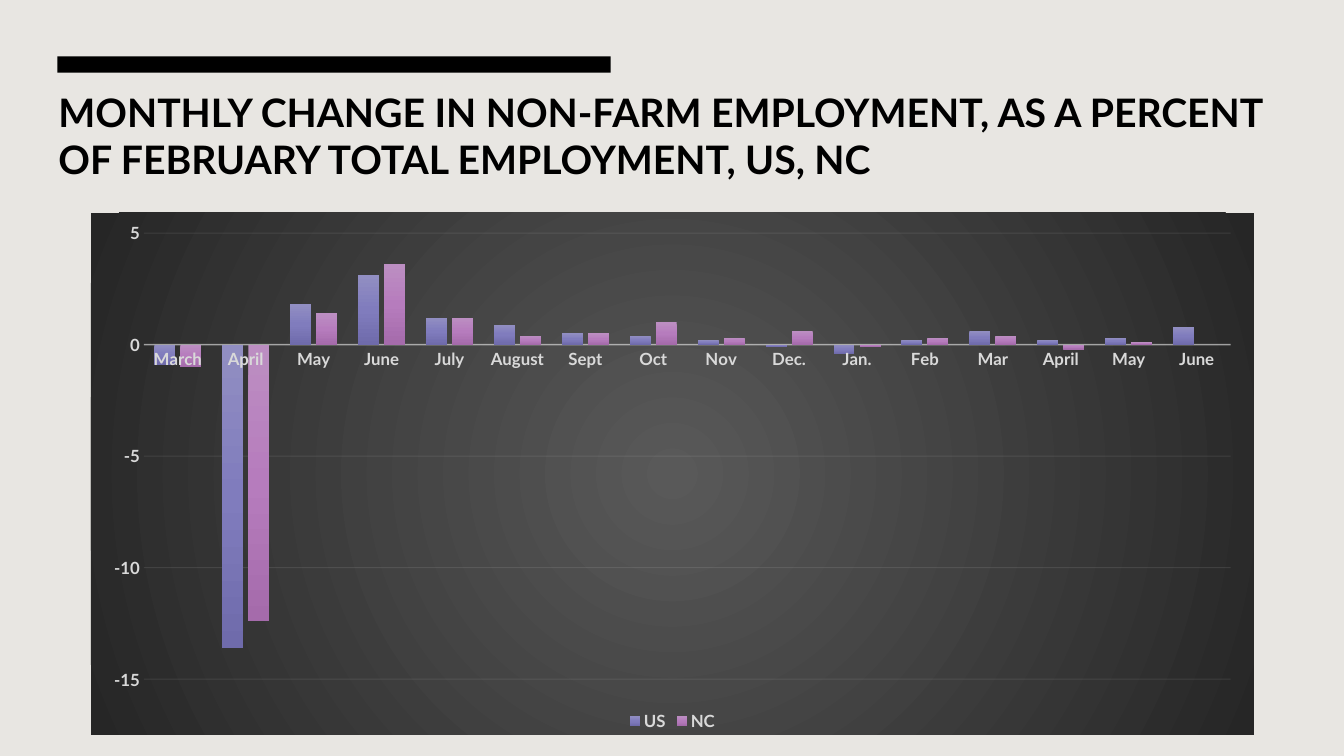
from lxml import etree
from pptx import Presentation
from pptx.chart.data import CategoryChartData
from pptx.dml.color import RGBColor
from pptx.enum import chart as ch, shapes, text
from pptx.oxml import parse_xml
from pptx.oxml.ns import nsdecls, qn
from pptx.util import Cm, Pt

PAPER = RGBColor(0xE8, 0xE6, 0xE2)
BLACK = RGBColor(0, 0, 0)
PALE = RGBColor(0xD9, 0xD9, 0xD9)
LINE = RGBColor(0xF2, 0xF2, 0xF2)
GREYS = RGBColor(0x59, 0x59, 0x59), RGBColor(0x26, 0x26, 0x26)
BLUES = (RGBColor(0x91, 0x8E, 0xC2), RGBColor(0x80, 0x7C, 0xBD),
         RGBColor(0x6F, 0x6B, 0xAB))
PINKS = (RGBColor(0xBC, 0x8E, 0xC2), RGBColor(0xB6, 0x7C, 0xBD),
         RGBColor(0xA5, 0x6B, 0xAB))
DOWN = '<a:lin ang="5400000" scaled="0"/>'
ROUND = ('<a:path path="circle"><a:fillToRect l="50000" t="50000" '
         'r="50000" b="50000"/></a:path>')

MONTHS = ["March", "April", "May", "June", "July", "August", "Sept", "Oct",
          "Nov", "Dec.", "Jan.", "Feb", "Mar", "April", "May", "June"]
US = [-0.9, -13.6, 1.8, 3.1, 1.2, 0.9, 0.5, 0.4,
      0.2, -0.1, -0.4, 0.2, 0.6, 0.2, 0.3, 0.8]
NC = [-1, -12.4, 1.4, 3.6, 1.2, 0.4, 0.5, 1,
      0.3, 0.6, -0.1, 0.3, 0.4, -0.2, 0.1, None]


def blend(props, tones, course):
    """Fill shape properties with evenly spaced gradient stops."""
    step = 100000 // (len(tones) - 1)
    stops = "".join(f'<a:gs pos="{i * step}"><a:srgbClr val="{tone}"/></a:gs>'
                    for i, tone in enumerate(tones))
    props.insert(0, parse_xml(f'<a:gradFill {nsdecls("a")} rotWithShape="1">'
                              f'<a:gsLst>{stops}</a:gsLst>{course}</a:gradFill>'))


def rule(line, width, alpha):
    """Draw a pale chart line with the given opacity in percent."""
    line.color.rgb = LINE
    line.width = Pt(width)
    tone = line.fill._xPr.find(".//" + qn("a:srgbClr"))
    etree.SubElement(tone, qn("a:alpha")).set("val", str(alpha * 1000))


deck = Presentation()
deck.slide_width, deck.slide_height = Cm(33.87), Cm(19.05)
slide = deck.slides.add_slide(deck.slide_layouts[5])
slide.background.fill.solid()
slide.background.fill.fore_color.rgb = PAPER

bar = slide.shapes.add_shape(shapes.MSO_SHAPE.RECTANGLE,
                             Cm(1.45), Cm(1.42), Cm(13.94), Cm(0.41))
bar.shadow.inherit = False
bar.fill.solid()
bar.fill.fore_color.rgb = BLACK
bar.line.fill.background()

title = slide.shapes.title
spot = dict(left=Cm(1.22), top=Cm(2.06), width=Cm(31.93), height=Cm(2.69))
for key, val in spot.items():
    setattr(title, key, val)
frame = title.text_frame
frame.text = ("MONTHLY CHANGE IN NON-FARM EMPLOYMENT, AS A PERCENT "
              "OF FEBRUARY TOTAL EMPLOYMENT, US, NC")
frame.word_wrap = True
frame.auto_size = text.MSO_AUTO_SIZE.NONE
frame.vertical_anchor = text.MSO_ANCHOR.MIDDLE
head = frame.paragraphs[0]
head.alignment = text.PP_ALIGN.LEFT
head.runs[0].font.color.rgb = BLACK
for key, val in dict(name="Lato", size=Pt(28), bold=True).items():
    setattr(head.runs[0].font, key, val)

data = CategoryChartData()
data.categories = MONTHS
data.add_series("US", US)
data.add_series("NC", NC)
chart = slide.shapes.add_chart(
    ch.XL_CHART_TYPE.COLUMN_CLUSTERED,
    Cm(2.29), Cm(5.36), Cm(29.31), Cm(13.16), data).chart
chart.has_title = False
chart.font.name, chart.font.size = "Lato", Pt(10)
chart.font.color.rgb = BLACK
area = parse_xml(f'<c:spPr {nsdecls("c", "a")}><a:ln><a:noFill/></a:ln></c:spPr>')
blend(area, GREYS, ROUND)
chart._chartSpace.find(qn("c:chart")).addnext(area)

plot = chart.plots[0]
plot.gap_width, plot.overlap, plot.vary_by_categories = 100, -24, False
for series, tones in zip(plot.series, (BLUES, PINKS)):
    blend(series._element.get_or_add_spPr(), tones, DOWN)

chart.has_legend = True
legend = chart.legend
legend.position = ch.XL_LEGEND_POSITION.BOTTOM
legend.include_in_layout = False

months, scale = chart.category_axis, chart.value_axis
for axis in months, scale:
    axis.major_tick_mark = axis.minor_tick_mark = ch.XL_TICK_MARK.NONE
for key, val in dict(minimum_scale=-15, maximum_scale=5, major_unit=5).items():
    setattr(scale, key, val)
rule(months.format.line, 1, 54)
rule(scale.major_gridlines.format.line, 0.75, 10)
scale.format.line.fill.background()

for font in legend.font, months.tick_labels.font, scale.tick_labels.font:
    font.color.rgb = PALE
    for key, val in dict(name="Lato", size=Pt(12), bold=True).items():
        setattr(font, key, val)

deck.save("out.pptx")
